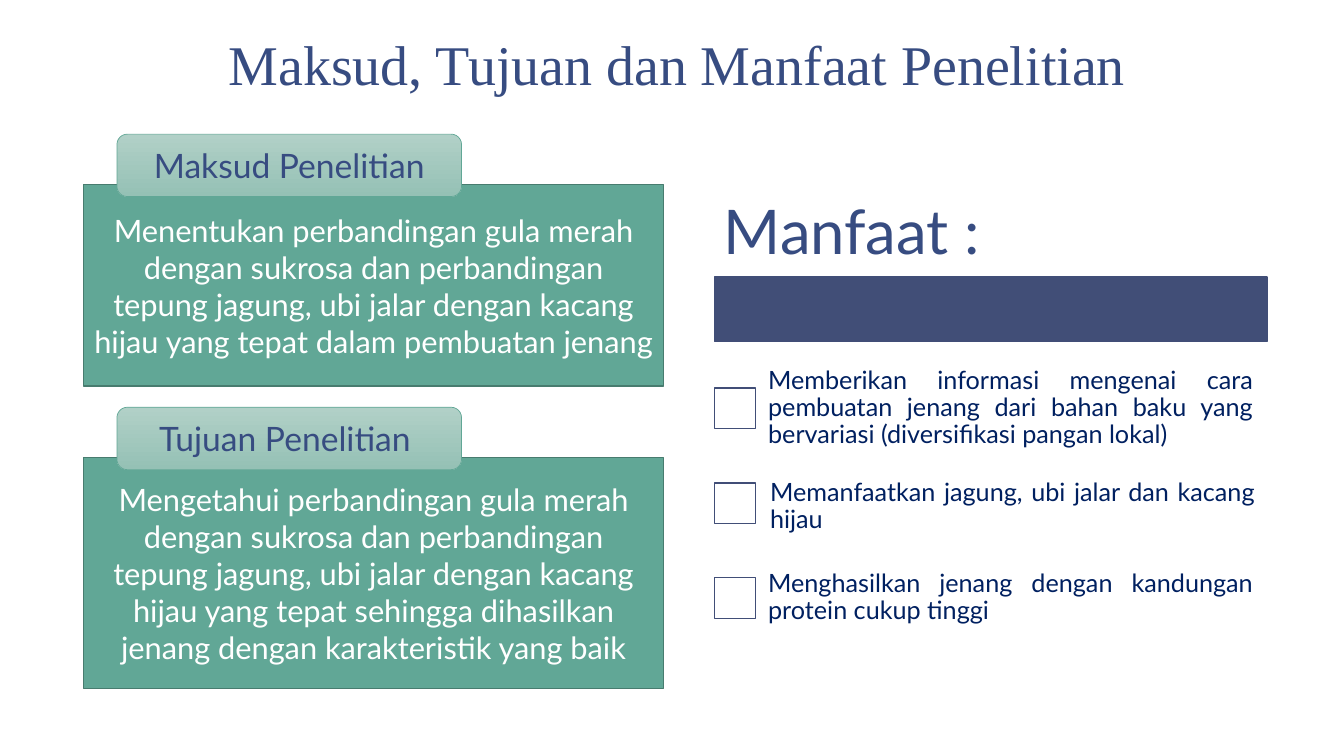
from pptx import Presentation
from pptx.dml.color import RGBColor
from pptx.enum.shapes import MSO_SHAPE
from pptx.enum.text import MSO_ANCHOR, MSO_AUTO_SIZE, PP_ALIGN
from pptx.util import Pt

RECT, ROUND = MSO_SHAPE.RECTANGLE, MSO_SHAPE.ROUNDED_RECTANGLE
MIDDLE, BOTTOM = MSO_ANCHOR.MIDDLE, MSO_ANCHOR.BOTTOM
LEFT, CENTER, JUSTIFY = PP_ALIGN.LEFT, PP_ALIGN.CENTER, PP_ALIGN.JUSTIFY
NO_FIT = MSO_AUTO_SIZE.NONE

# Content
TITLE = "Maksud, Tujuan dan Manfaat Penelitian"
# label, text, top and height of the panel
PANELS = [
    ("Maksud Penelitian",
     "Menentukan perbandingan gula merah dengan sukrosa dan perbandingan "
     "tepung jagung, ubi jalar dengan kacang hijau yang tepat dalam "
     "pembuatan jenang", 131.8, 144),
    ("Tujuan Penelitian ",
     "Mengetahui perbandingan gula merah dengan sukrosa dan perbandingan "
     "tepung jagung, ubi jalar dengan kacang hijau yang tepat sehingga "
     "dihasilkan jenang dengan karakteristik yang baik", 326.9, 164.9),
]
HEAD = "Manfaat :"
# text, shift right and down from the row
ITEMS = [
    ("Memberikan informasi mengenai cara pembuatan jenang dari bahan baku "
     "yang bervariasi (diversifikasi pangan lokal)", 0, 0),
    ("Memanfaatkan jagung, ubi jalar dan kacang hijau", 1.4, 2.7),
    ("Menghasilkan jenang dengan kandungan protein cukup tinggi", 0, 0),
]

# Theme
THEME = {
    "navy": "374C81", "bar": "414E77", "ink": "002060", "white": "FFFFFF",
    "green": "61A796", "edge": "487C6F", "tab": ("B1D0C7", "95C1B5"),
    "title": {"name": "Times New Roman", "size": Pt(40)},
    "panel": {"name": "Lato", "size": Pt(22)},
    "label": {"name": "Lato", "size": Pt(24)},
    "head": {"name": "Lato", "size": Pt(44)},
    "item": {"name": "Lato", "size": Pt(18)},
}


def rgb(key):
    return RGBColor.from_string(THEME.get(key, key))


def write(shape, text, font, color, align, pad=(7.2, 3.6), gap=1.0,
          anchor=MIDDLE):
    frame = shape.text_frame
    frame.text = text
    across, down = map(Pt, pad)
    form = {"word_wrap": True, "auto_size": NO_FIT, "vertical_anchor": anchor,
            "margin_left": across, "margin_right": across,
            "margin_top": down, "margin_bottom": down}
    para = frame.paragraphs[0]
    lines = {"alignment": align, "line_spacing": gap}
    run = para.runs[0]
    for part, values in ((frame, form), (para, lines),
                         (run.font, THEME[font])):
        for name, value in values.items():
            setattr(part, name, value)
    run.font.color.rgb = rgb(color)


def block(slide, kind, box, fill, edge, width=1):
    shape = slide.shapes.add_shape(kind, *map(Pt, box))
    shape.shadow.inherit = False
    if fill == "tab":
        shape.fill.gradient()
        shape.fill.gradient_angle = 270
        for stop, color in zip(shape.fill.gradient_stops, THEME["tab"]):
            stop.color.rgb = rgb(color)
    else:
        shape.fill.solid()
        shape.fill.fore_color.rgb = rgb(fill)
    shape.line.color.rgb = rgb(edge)
    shape.line.width = Pt(width)
    return shape


def main():
    deck = Presentation()
    deck.slide_width, deck.slide_height = Pt(960), Pt(540)
    slide = deck.slides.add_slide(deck.slide_layouts[5])

    # Title
    title = slide.shapes.title
    title.left, title.top, title.width, title.height = map(
        Pt, (83.5, 12.2, 800, 62))
    write(title, TITLE, "title", "navy", CENTER, (9.4, 5), 0.85, BOTTOM)

    # Benefits: heading, bar and check rows
    left, wide = 510.5, 394.6
    block(slide, RECT, (left, 198, wide, 46.1), "bar", "bar")
    head = slide.shapes.add_textbox(*map(Pt, (left, 126, wide, 83.5)))
    write(head, HEAD, "head", "navy", LEFT, (6.5, 4.3), 0.9)

    side, step = 29, 67.7
    for row, (text, right, down) in enumerate(ITEMS):
        top = 277.2 + row * step
        block(slide, RECT, (left, top, side, side), "white", "bar")
        spot = (left + side - 0.8 + right, top + (side - step) / 2 + down,
                366.4, step)
        note = slide.shapes.add_textbox(*map(Pt, spot))
        write(note, text, "item", "ink", JUSTIFY, (10, 10), 0.9)

    # Panels with their tabs
    for label, text, top, high in PANELS:
        panel = block(slide, RECT, (59.8, top, 414, high), "green", "edge")
        write(panel, text, "panel", "white", CENTER)
        tab = block(slide, ROUND, (83.5, top - 36, 246.2, 44.6), "tab",
                    "green", 0.5)
        write(tab, label, "label", "navy", CENTER)

    deck.save("out.pptx")


if __name__ == "__main__":
    main()
